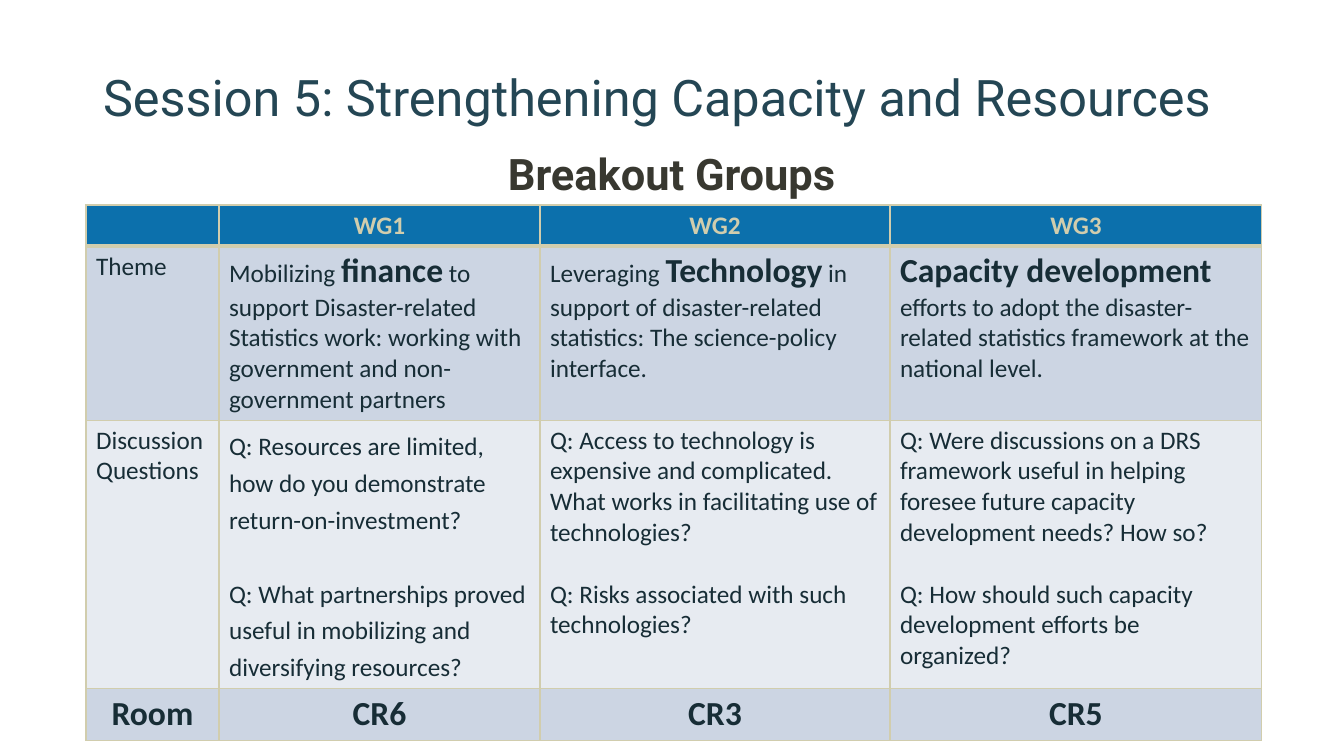
from lxml.etree import SubElement
from pptx import Presentation
from pptx.dml.color import RGBColor
from pptx.enum.text import MSO_ANCHOR, MSO_AUTO_SIZE, PP_ALIGN
from pptx.oxml.ns import qn
from pptx.util import Emu, Pt

EMU_PER_PX = 914400 / 100.8
TITLE_COLOR = RGBColor(0x24, 0x46, 0x54)
SUBTITLE_COLOR = RGBColor(0x38, 0x38, 0x30)
INK = RGBColor(0x17, 0x2D, 0x36)
SAND = RGBColor(0xD1, 0xCD, 0xAD)
BLUE = RGBColor(0x0C, 0x70, 0xAC)
BAND_DARK = RGBColor(0xCC, 0xD5, 0xE3)
BAND_LIGHT = RGBColor(0xE7, 0xEB, 0xF1)

COLUMN_WIDTHS = [133, 321, 350, 372]
ROW_HEIGHTS = [41, 174, 268, 52]
ROW_FILLS = [BLUE, BAND_DARK, BAND_LIGHT, BAND_DARK]

GROUPS = ["", "WG1", "WG2", "WG3"]
THEMES = [
    [("Theme", False)],
    [("Mobilizing ", False), ("finance", True),
     (" to support Disaster-related Statistics work: working with "
      "government and non-government partners", False)],
    [("Leveraging ", False), ("Technology", True),
     (" in support of disaster-related statistics: The science-policy interface.", False)],
    [("Capacity development ", True),
     ("efforts to adopt the disaster-related statistics framework at the national level.", False)],
]
QUESTIONS = [
    ["Discussion Questions"],
    ["Q: Resources are limited, how do you demonstrate return-on-investment?",
     "Q: What partnerships proved useful in mobilizing and diversifying resources?"],
    ["Q: Access to technology is expensive and complicated. "
     "What works in facilitating use of technologies?",
     "Q: Risks associated with such technologies?"],
    ["Q: Were discussions on a DRS framework useful in helping foresee "
     "future capacity development needs? How so?",
     "Q: How should such capacity development efforts be organized?"],
]
QUESTION_SPACING = [1.0, 1.2, 1.0, 1.0]
ROOMS = ["Room", "CR6", "CR3", "CR5"]


def px(length):
    return Emu(round(length * EMU_PER_PX))


def style_font(font, name, size, color, bold=False):
    font.name = name
    font.size = Pt(size)
    font.bold = bold
    font.color.rgb = color


def fill_placeholder(shape, box, text, anchor, align, spacing):
    shape.left, shape.top, shape.width, shape.height = map(px, box)
    frame = shape.text_frame
    frame.text = text
    frame.word_wrap = True
    frame.auto_size = MSO_AUTO_SIZE.NONE
    frame.vertical_anchor = anchor
    para = frame.paragraphs[0]
    para.alignment = align
    para.line_spacing = spacing
    para.space_before = Pt(0)
    return para


def add_title(page, box):
    para = fill_placeholder(page.shapes.title, box,
                            "Session 5: Strengthening Capacity and Resources",
                            MSO_ANCHOR.MIDDLE, PP_ALIGN.LEFT, 0.9)
    style_font(para.runs[0].font, "Roboto", 36, TITLE_COLOR)


def add_subtitle(page, box):
    para = fill_placeholder(page.placeholders[1], box, "Breakout Groups",
                            MSO_ANCHOR.TOP, PP_ALIGN.CENTER, 1.2)
    properties = para._p.get_or_add_pPr()
    properties.set("marL", "0")
    properties.set("indent", "0")
    SubElement(properties, qn("a:buNone"))
    style_font(para.runs[0].font, "Roboto", 31, SUBTITLE_COLOR, True)


def border_cell(cell, row):
    properties = cell._tc.get_or_add_tcPr()
    widths = {"L": 1, "R": 1, "T": 3 if row == 1 else 1, "B": 3 if row == 0 else 1}
    for side, width in widths.items():
        line = SubElement(properties, qn(f"a:ln{side}"), w=str(Pt(width)))
        solid = SubElement(line, qn("a:solidFill"))
        SubElement(solid, qn("a:srgbClr"), val=str(SAND))


def write_label(cell, text, size, color):
    cell.text_frame.text = text
    para = cell.text_frame.paragraphs[0]
    para.alignment = PP_ALIGN.CENTER
    style_font(para.font, "Calibri", size, color, True)
    for span in para.runs:
        style_font(span.font, "Calibri", size, color, True)


def write_theme(cell, pieces):
    para = cell.text_frame.paragraphs[0]
    for text, strong in pieces:
        span = para.add_run()
        span.text = text
        style_font(span.font, "Calibri", 24 if strong else 18, INK, strong)


def write_questions(cell, questions, spacing):
    frame = cell.text_frame
    for index, question in enumerate(questions):
        para = frame.add_paragraph() if index else frame.paragraphs[0]
        para.text = question
        para.line_spacing = spacing
        para.space_before = Pt(22 * spacing if index else 0)
        style_font(para.runs[0].font, "Calibri", 18, INK)


def add_group_table(page, left, top):
    frame = page.shapes.add_table(len(ROW_HEIGHTS), len(COLUMN_WIDTHS), px(left), px(top),
                                  px(sum(COLUMN_WIDTHS)), px(sum(ROW_HEIGHTS)))
    table = frame.table
    for column, width in zip(table.columns, COLUMN_WIDTHS):
        column.width = px(width)
    for row, (height, color) in enumerate(zip(ROW_HEIGHTS, ROW_FILLS)):
        table.rows[row].height = px(height)
        for cell in table.rows[row].cells:
            border_cell(cell, row)
            cell.fill.solid()
            cell.fill.fore_color.rgb = color
    for column in range(len(COLUMN_WIDTHS)):
        write_label(table.cell(0, column), GROUPS[column], 18, SAND)
        write_theme(table.cell(1, column), THEMES[column])
        write_questions(table.cell(2, column), QUESTIONS[column], QUESTION_SPACING[column])
        write_label(table.cell(3, column), ROOMS[column], 24, INK)


def main():
    deck = Presentation()
    deck.slide_width, deck.slide_height = px(1344), px(756)
    page = deck.slides.add_slide(deck.slide_layouts[1])
    add_title(page, (93, 58, 1159, 85))
    add_subtitle(page, (92, 132, 1159, 613))
    add_group_table(page, 86, 205)
    deck.save("out.pptx")


if __name__ == "__main__":
    main()
